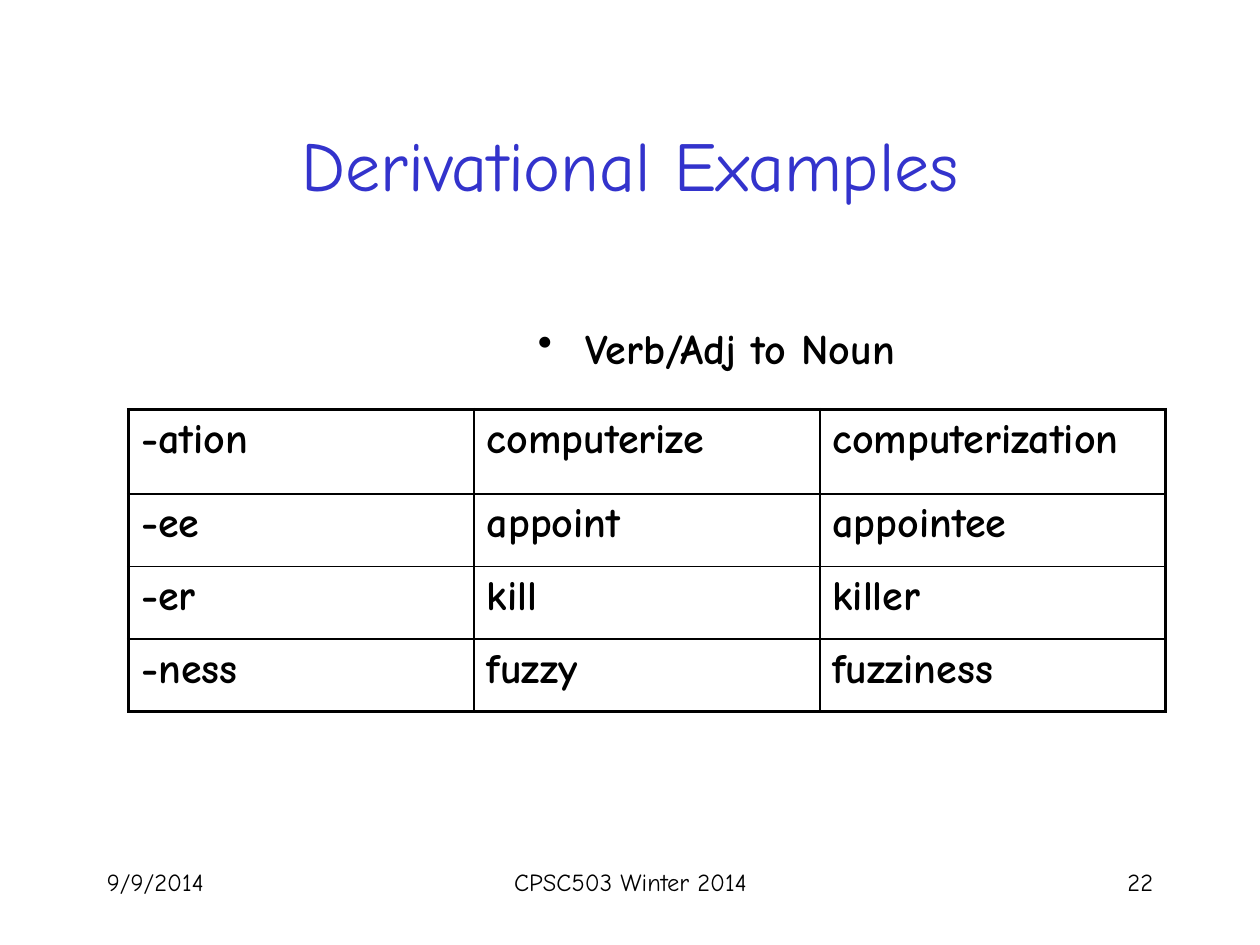
from pptx import Presentation
from pptx.dml.color import RGBColor
from pptx.enum.text import MSO_ANCHOR, PP_ALIGN
from pptx.oxml.ns import qn
from pptx.util import Inches, Pt
from lxml.etree import SubElement

FONT = "Comic Neue"
COLORS = {"title": "3333CC", "text": "000000", "border": "000000"}
THIN, THICK = 1, 2.25
ROWS = [
    ["-ation", "computerize", "computerization"],
    ["-ee", "appoint", "appointee"],
    ["-er", "kill", "killer"],
    ["-ness", "fuzzy", "fuzziness"],
]


def write(tf, text, size, color="text", bold=False, align=PP_ALIGN.LEFT):
    tf.word_wrap = True
    p = tf.paragraphs[0]
    p.text = text
    p.alignment = align
    font = p.runs[0].font
    font.name, font.size, font.bold = FONT, Pt(size), bold
    font.color.rgb = RGBColor.from_string(COLORS[color])
    return p


def add_title(s, left, top, width, height):
    sp = s.shapes.title
    sp.left, sp.top, sp.width, sp.height = left, top, width, height
    sp.text_frame.vertical_anchor = MSO_ANCHOR.MIDDLE
    write(sp.text_frame, "Derivational Examples", 40, "title", align=PP_ALIGN.CENTER)


def add_bullet(s, left, top, width, height):
    sp = s.shapes.add_textbox(left, top, width, height)
    p = write(sp.text_frame, "Verb/Adj to Noun", 24, bold=True)
    p.space_before = Pt(5)
    pPr = p._p.get_or_add_pPr()
    indent = Inches(0.38)
    pPr.set("marL", str(indent))
    pPr.set("indent", str(-indent))
    SubElement(pPr, qn("a:buChar"), char="•")


def set_border(cell, side, width):
    ln = SubElement(cell._tc.get_or_add_tcPr(), qn(f"a:ln{side}"), w=str(Pt(width)))
    fill = SubElement(ln, qn("a:solidFill"))
    SubElement(fill, qn("a:srgbClr"), val=COLORS["border"])


def add_suffix_table(s, left, top, width, height):
    n_rows, n_cols = len(ROWS), len(ROWS[0])
    table = s.shapes.add_table(n_rows, n_cols, left, top, width, height).table
    table.first_row = table.horz_banding = False
    # The first row is taller, the others share the rest
    first = Inches(0.67)
    for i, row in enumerate(table.rows):
        row.height = first if i == 0 else (height - first) // (n_rows - 1)
    for i, words in enumerate(ROWS):
        for j, word in enumerate(words):
            cell = table.cell(i, j)
            write(cell.text_frame, word, 24, bold=True).space_before = Pt(5)
            # Thick outer frame, thin inner lines
            outer = {"L": j == 0, "R": j == n_cols - 1, "T": i == 0, "B": i == n_rows - 1}
            for side, is_outer in outer.items():
                set_border(cell, side, THICK if is_outer else THIN)
            cell.fill.background()


def add_footer(s, top, height):
    parts = [
        ("9/9/2014", 0.75, 2.08, PP_ALIGN.LEFT),
        ("CPSC503 Winter 2014", 3.42, 3.17, PP_ALIGN.CENTER),
        ("22", 7.17, 2.08, PP_ALIGN.RIGHT),
    ]
    for text, left, width, align in parts:
        sp = s.shapes.add_textbox(Inches(left), top, Inches(width), height)
        write(sp.text_frame, text, 14, align=align)


def main():
    prs = Presentation()
    prs.slide_width, prs.slide_height = Inches(10), Inches(7.5)
    s = prs.slides.add_slide(prs.slide_layouts[5])
    add_footer(s, Inches(6.83), Inches(0.5))
    add_title(s, Inches(0.75), Inches(0.67), Inches(8.5), Inches(1.25))
    add_bullet(s, Inches(4.17), Inches(2.51), Inches(4.17), Inches(4.5))
    add_suffix_table(s, Inches(1.02), Inches(3.25), Inches(8.23), Inches(2.4))
    prs.save("out.pptx")


if __name__ == "__main__":
    main()
